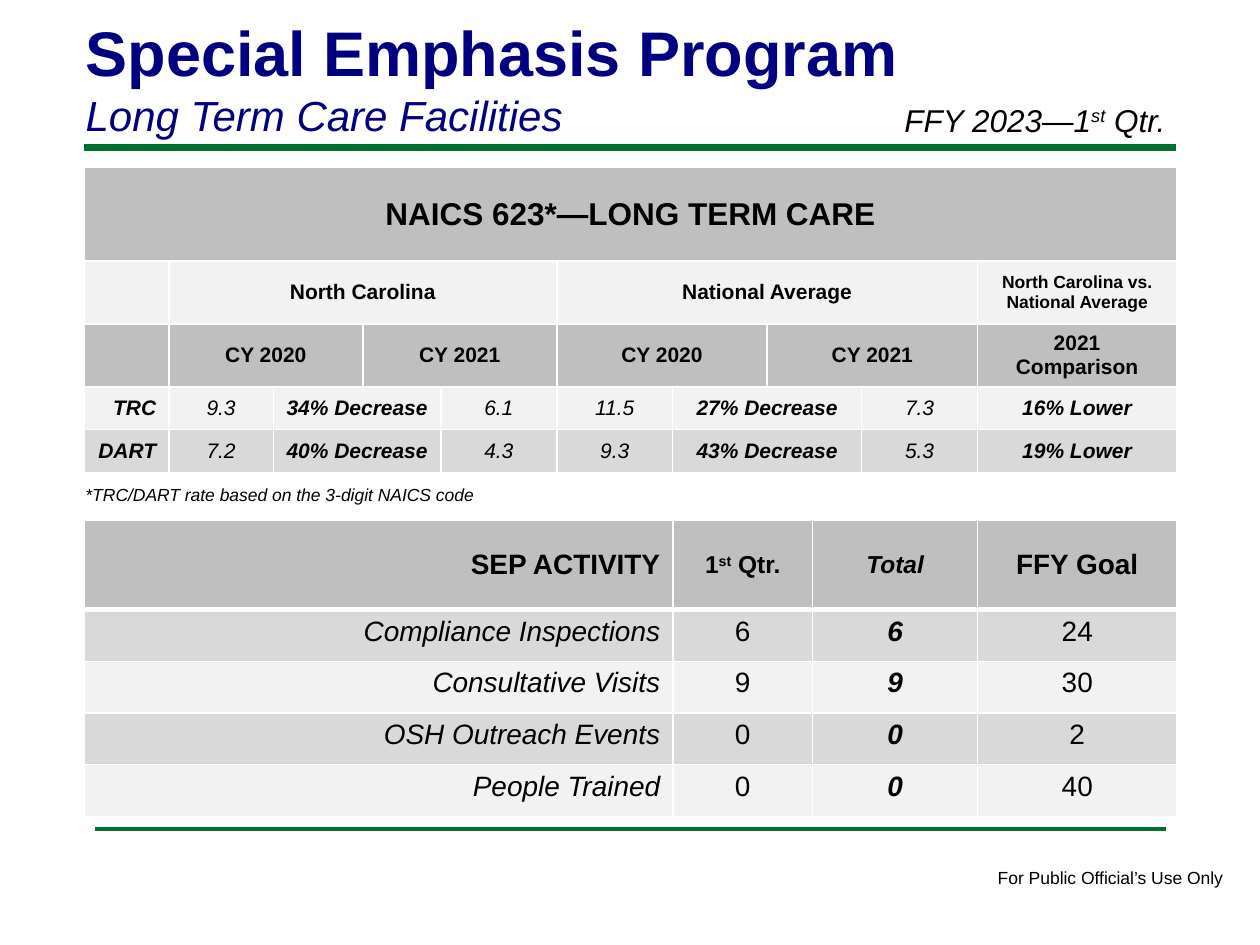
import pptx
import pptx.dml.color
import pptx.enum.shapes
import pptx.enum.text
import pptx.oxml
import pptx.oxml.ns
import pptx.util

Inches = pptx.util.Inches
Pt = pptx.util.Pt
RGBColor = pptx.dml.color.RGBColor
ALIGN = pptx.enum.text.PP_ALIGN
ANCHOR = pptx.enum.text.MSO_ANCHOR

FONT = "Arial"
NAVY = RGBColor(0x00, 0x00, 0x80)
GREEN = RGBColor(0x00, 0x70, 0x30)
BLACK = RGBColor(0x00, 0x00, 0x00)
HEADER = RGBColor(0xBF, 0xBF, 0xBF)
DARK = RGBColor(0xD9, 0xD9, 0xD9)
LIGHT = RGBColor(0xF2, 0xF2, 0xF2)

# Text between carets is superscript. Styles: b = bold, i = italic.
TITLE = [("Special Emphasis Program", 36, "b"), ("Long Term Care Facilities", 24, "i")]

# left, top, width, height, text, size, style, wrap
LABELS = [
    (7.82, 6.83, 2.01, 0.27, "For Public Official’s Use Only", 10, "", False),
    (0.58, 3.79, 3.38, 0.27, "*TRC/DART rate based on the 3-digit NAICS code", 10, "i", False),
    (7.08, 0.75, 2.5, 0.4, "FFY 2023—1^st^ Qtr.", 18, "i", True),
]

# left, right, height on the slide, line width
RULES = [(0.67, 9.33, 1.17, 4), (0.75, 9.25, 6.58, 2)]


def rate_row(fill, name, values):
    """Row of rates: 2020 and 2021 values around each change, then the comparison."""
    layout = [(1, "i"), (2, "bi"), (1, "i")] * 2 + [(1, "bi")]
    cells = [(text, span, 12, style) for text, (span, style) in zip(values, layout)]
    return fill, [(name, 1, 12, "bi")] + cells


def activity_row(fill, name, quarter, total, goal):
    styles = ["i", "", "bi", ""]
    return fill, [(text, 1, 16, style)
                  for text, style in zip((name, quarter, total, goal), styles)]


# Each row: fill, cells of (text, columns spanned, size, style)
RATES = {
    "top": 1.33,
    "columns": [0.67, 0.83, 0.71, 0.62, 0.92, 0.92, 0.75, 0.75, 0.92, 1.58],
    "heights": [0.74, 0.5, 0.5, 0.34, 0.34],
    "right_aligned_rows": (3, 4),
    "middle_rows": range(5),
    "header_rule": 1,
    "rows": [
        (HEADER, [("NAICS 623*—LONG TERM CARE", 10, 18, "b")]),
        (LIGHT, [("", 1, 12, ""), ("North Carolina", 4, 12, "b"),
                 ("National Average", 4, 12, "b"),
                 ("North Carolina vs. National Average", 1, 10, "b")]),
        (HEADER, [("", 1, 12, "")]
         + [("CY 2020", 2, 12, "b"), ("CY 2021", 2, 12, "b")] * 2
         + [("2021 Comparison", 1, 12, "b")]),
        rate_row(LIGHT, "TRC", ["9.3", "34% Decrease", "6.1", "11.5", "27% Decrease",
                                "7.3", "16% Lower"]),
        rate_row(DARK, "DART", ["7.2", "40% Decrease", "4.3", "9.3", "43% Decrease",
                                "5.3", "19% Lower"]),
    ],
}
ACTIVITY = {
    "top": 4.13,
    "columns": [4.67, 1.11, 1.31, 1.58],
    "heights": [0.71] + [0.41] * 4,
    "right_aligned_rows": range(5),
    "middle_rows": (0,),
    "header_rule": 3,
    "rows": [
        (HEADER, [("SEP ACTIVITY", 1, 16, "b"), ("1^st^ Qtr.", 1, 14, "b"),
                  ("Total", 1, 14, "bi"), ("FFY Goal", 1, 16, "b")]),
        activity_row(DARK, "Compliance Inspections", "6", "6", "24"),
        activity_row(LIGHT, "Consultative Visits", "9", "9", "30"),
        activity_row(DARK, "OSH Outreach Events", "0", "0", "2"),
        activity_row(LIGHT, "People Trained", "0", "0", "40"),
    ],
}
TABLE_LEFT = 0.67


def write(para, text, size, style, color=BLACK):
    para.font.size = Pt(size)
    for number, part in enumerate(text.split("^")):
        if not part:
            continue
        span = para.add_run()
        span.text = part
        span.font.name = FONT
        span.font.size = Pt(size)
        span.font.bold = "b" in style
        span.font.italic = "i" in style
        span.font.color.rgb = color
        if number % 2:
            span.font._element.set("baseline", "30000")


def add_title(page):
    title = page.shapes.title
    title.left, title.top = Inches(0.58), Inches(0.06)
    title.width, title.height = Inches(8.25), Inches(1.11)
    frame = title.text_frame
    frame.auto_size = pptx.enum.text.MSO_AUTO_SIZE.NONE
    frame.vertical_anchor = ANCHOR.TOP
    for number, (text, size, style) in enumerate(TITLE):
        para = frame.add_paragraph() if number else frame.paragraphs[0]
        para.alignment = ALIGN.LEFT
        write(para, text, size, style, NAVY)


def add_label(page, left, top, width, height, text, size, style, wrap):
    box = page.shapes.add_textbox(*map(Inches, (left, top, width, height)))
    box.text_frame.word_wrap = wrap
    write(box.text_frame.paragraphs[0], text, size, style)


def add_rule(page, left, right, top, width):
    rule = page.shapes.add_connector(
        pptx.enum.shapes.MSO_CONNECTOR.STRAIGHT,
        Inches(left), Inches(top), Inches(right), Inches(top))
    rule.line.color.rgb = GREEN
    rule.line.width = Pt(width)
    rule._element.spPr.append(pptx.oxml.parse_xml(
        f"<a:effectLst {pptx.oxml.ns.nsdecls('a')}/>"))


def set_borders(cell, top, bottom):
    properties = cell._tc.get_or_add_tcPr()
    for side, width in (("L", 1), ("R", 1), ("T", top), ("B", bottom)):
        properties.append(pptx.oxml.parse_xml(
            f'<a:ln{side} {pptx.oxml.ns.nsdecls("a")} w="{Pt(width)}">'
            f'<a:solidFill><a:srgbClr val="FFFFFF"/></a:solidFill></a:ln{side}>'))


def add_table(page, data):
    columns, heights = data["columns"], data["heights"]
    table = page.shapes.add_table(
        len(heights), len(columns), Inches(TABLE_LEFT), Inches(data["top"]),
        Inches(sum(columns)), Inches(sum(heights))).table
    for column, width in zip(table.columns, columns):
        column.width = Inches(width)
    for row, height in zip(table.rows, heights):
        row.height = Inches(height)

    for row, (fill, cells) in enumerate(data["rows"]):
        column = 0
        for text, span, size, style in cells:
            for covered in range(column, column + span):
                cell = table.cell(row, covered)
                set_borders(cell, data["header_rule"] if row == 1 else 1,
                            data["header_rule"] if row == 0 else 1)
                cell.fill.solid()
                cell.fill.fore_color.rgb = fill
            first = table.cell(row, column)
            if span > 1:
                first.merge(table.cell(row, column + span - 1))
            if row in data["middle_rows"]:
                first.vertical_anchor = ANCHOR.MIDDLE
            para = first.text_frame.paragraphs[0]
            to_right = column == 0 and row in data["right_aligned_rows"]
            para.alignment = ALIGN.RIGHT if to_right else ALIGN.CENTER
            write(para, text, size, style)
            column += span


def main():
    deck = pptx.Presentation()
    deck.slide_width, deck.slide_height = Inches(10), Inches(7.5)
    page = deck.slides.add_slide(deck.slide_layouts[5])
    for rule in RULES:
        add_rule(page, *rule)
    add_title(page)
    for label in LABELS:
        add_label(page, *label)
    for data in (ACTIVITY, RATES):
        add_table(page, data)
    deck.save("out.pptx")


if __name__ == "__main__":
    main()
